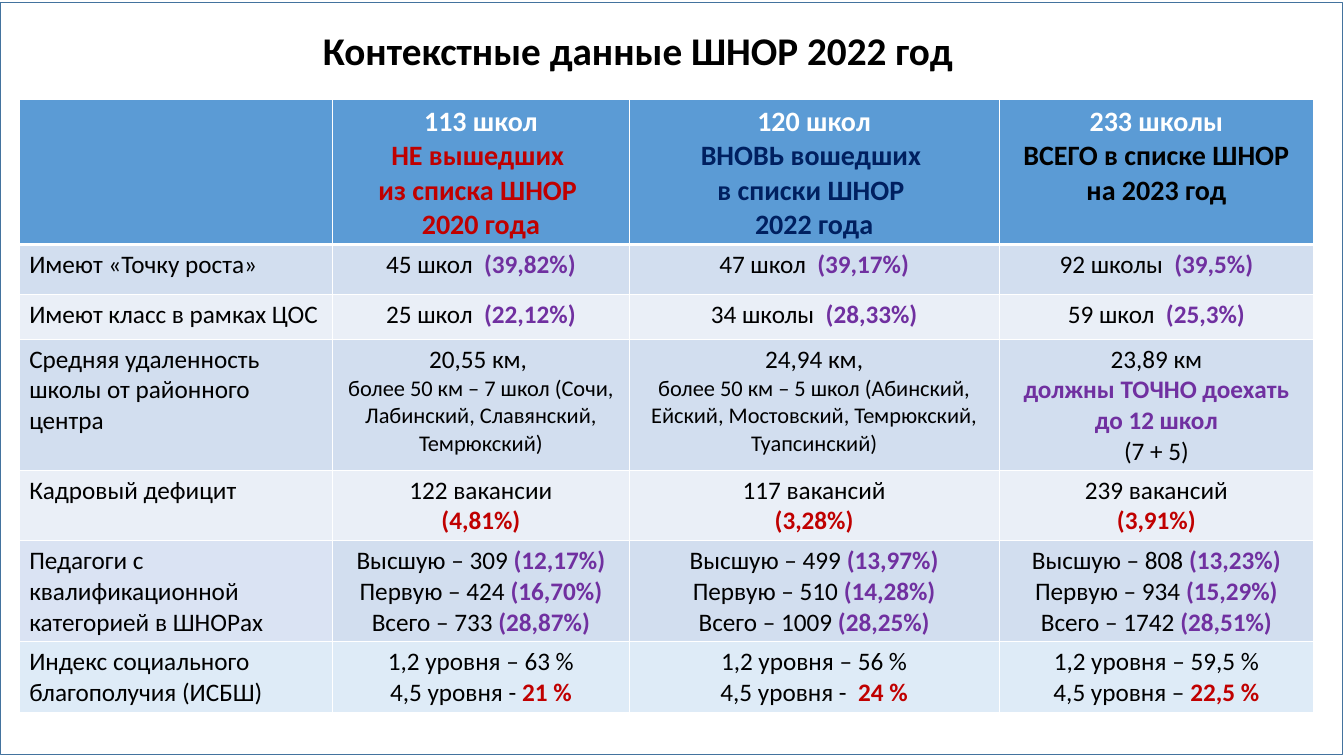
from dataclasses import dataclass

from lxml.etree import SubElement
from pptx import Presentation
from pptx.dml.color import RGBColor
from pptx.enum.shapes import MSO_SHAPE as Shape
from pptx.enum.text import MSO_ANCHOR as Anchor, PP_ALIGN as Align
from pptx.oxml.ns import qn
from pptx.util import Emu, Inches, Pt


@dataclass(frozen=True)
class Theme:
    font: str = "Calibri"
    title_size: float = 28
    head_size: float = 20
    body_size: float = 18
    small_size: float = 16
    black: str = "000000"
    white: str = "FFFFFF"
    red: str = "C00000"
    navy: str = "002060"
    purple: str = "7030A0"
    frame: str = "43739E"
    head_fill: str = "5B9BD5"
    dark_band: str = "D2DEEF"
    light_band: str = "EAEFF7"
    teacher_fill: str = "DAE3F3"
    index_fill: str = "DEEBF7"


@dataclass(frozen=True)
class Box:
    """Place on the grid of 80 columns by 45 rows."""
    left: float
    top: float
    width: float
    height: float


@dataclass(frozen=True)
class Span:
    text: str
    color: str = Theme.black
    bold: bool = False
    size: float = Theme.body_size


Line = tuple[Span, ...]
Cell = list[Line]


@dataclass(frozen=True)
class Row:
    height: float
    cells: list[Cell]
    fill: str
    first_fill: str = ""
    anchor: Anchor = Anchor.TOP


THEME = Theme()
UNIT = Inches(7.5) / 45
FRAME = Box(0, 0.12, 79.86, 44.76)
TITLE = Box(10.26, 0.42, 55.38, 5.46)
TABLE = Box(1.14, 5.94, 77.1, 36.42)
COLUMNS = [18.66, 17.64, 22.02, 18.72]


# Content helpers
def grid(cells: float) -> Emu:
    return Emu(round(cells * UNIT))


def place(box: Box) -> tuple[Emu, Emu, Emu, Emu]:
    return grid(box.left), grid(box.top), grid(box.width), grid(box.height)


def line(text: str, share: str = "", color: str = THEME.purple) -> Line:
    """A plain text, followed by a bold coloured share if there is one."""
    spans = (Span(text), Span(share, color, True))
    return tuple(span for span in spans if span.text)


def heading(count: str, color: str, *texts: str) -> Cell:
    colors = [THEME.white] + [color] * len(texts)
    return [(Span(text, tint, True, THEME.head_size),)
            for text, tint in zip((count, *texts), colors)]


def distance(average: str, detail: str) -> Cell:
    return [line(average), (Span(detail, size=THEME.small_size),)]


def vacancies(count: str, share: str) -> Cell:
    return [line(count), line("", share, THEME.red)]


def teachers(*counts: tuple[int, str]) -> Cell:
    return [line(f"{level} – {count} ", f"({share}%)")
            for level, (count, share) in zip(("Высшую", "Первую", "Всего"), counts)]


def welfare(low: str, dash: str, high: str) -> Cell:
    return [line(f"1,2 уровня – {low} %"), line(f"4,5 уровня {dash}", f"{high} %", THEME.red)]


ROWS = [
    Row(2.94, [
        [],
        heading("113 школ", THEME.red, "НЕ вышедших ", "из списка ШНОР ", "2020 года"),
        heading("120 школ", THEME.navy, "ВНОВЬ вошедших ", "в списки ШНОР ", "2022 года"),
        heading("233 школы", THEME.black, "ВСЕГО в списке ШНОР", "на 2023 год"),
    ], THEME.head_fill),
    Row(3, [
        [line("Имеют «Точку роста»")],
        [line("45 школ  ", "(39,82%)")],
        [line("47 школ  ", "(39,17%)")],
        [line("92 школы  ", "(39,5%)")],
    ], THEME.dark_band),
    Row(2.64, [
        [line("Имеют класс в рамках ЦОС")],
        [line("25 школ  ", "(22,12%)")],
        [line("34 школы  ", "(28,33%)")],
        [line("59 школ  ", "(25,3%)")],
    ], THEME.light_band),
    Row(2.94, [
        [line("Средняя удаленность школы от районного центра")],
        distance("20,55 км, ",
                 "более 50 км – 7 школ (Сочи, Лабинский, Славянский, Темрюкский)"),
        distance("24,94 км,",
                 "более 50 км – 5 школ (Абинский, Ейский, Мостовский, Темрюкский, Туапсинский)"),
        [line("23,89 км"), line("", "должны ТОЧНО доехать до 12 школ"), line("(7 + 5)")],
    ], THEME.dark_band),
    Row(2.46, [
        [line("Кадровый дефицит")],
        vacancies("122 вакансии", "(4,81%)"),
        vacancies("117 вакансий", "(3,28%)"),
        vacancies("239 вакансий", "(3,91%)"),
    ], THEME.light_band),
    Row(4.5, [
        [line("Педагоги с квалификационной категорией в ШНОРах")],
        teachers((309, "12,17"), (424, "16,70"), (733, "28,87")),
        teachers((499, "13,97"), (510, "14,28"), (1009, "28,25")),
        teachers((808, "13,23"), (934, "15,29"), (1742, "28,51")),
    ], THEME.dark_band, THEME.teacher_fill, Anchor.MIDDLE),
    Row(2.94, [
        [line("Индекс социального благополучия (ИСБШ)")],
        welfare("63", "- ", "21"),
        welfare("56", "-  ", "24"),
        welfare("59,5", "– ", "22,5"),
    ], THEME.index_fill),
]


# Drawing
def write(frame, lines: Cell, align: Align) -> None:
    for number, spans in enumerate(lines):
        para = frame.add_paragraph() if number else frame.paragraphs[0]
        para.alignment = align
        for span in spans:
            run = para.add_run()
            run.text = span.text
            run.font.name = THEME.font
            run.font.size = Pt(span.size)
            run.font.bold = span.bold
            run.font.color.rgb = RGBColor.from_string(span.color)


def add_borders(cell, above: float, below: float) -> None:
    properties = cell._tc.get_or_add_tcPr()
    for side, width in zip("LRTB", (1, 1, above, below)):
        border = SubElement(properties, qn(f"a:ln{side}"), w=str(Pt(width)))
        fill = SubElement(border, qn("a:solidFill"))
        SubElement(fill, qn("a:srgbClr"), val=THEME.white)


def draw_frame(page) -> None:
    frame = page.shapes.add_shape(Shape.RECTANGLE, *place(FRAME))
    frame.shadow.inherit = False
    frame.fill.background()
    frame.line.color.rgb = RGBColor.from_string(THEME.frame)
    frame.line.width = Pt(0.25)


def draw_title(page) -> None:
    text = page.shapes.add_textbox(*place(TITLE)).text_frame
    text.word_wrap = True
    text.vertical_anchor = Anchor.MIDDLE
    text.margin_left = text.margin_right = text.margin_top = text.margin_bottom = Inches(0.04)
    title = Span("Контекстные данные ШНОР 2022 год", THEME.black, True, THEME.title_size)
    write(text, [(title,)], Align.CENTER)
    text.paragraphs[0].line_spacing = 0.9


def draw_table(page) -> None:
    holder = page.shapes.add_table(len(ROWS), len(COLUMNS), *place(TABLE))
    table = holder.table
    for column, width in zip(table.columns, COLUMNS):
        column.width = grid(width)
    for r, row in enumerate(ROWS):
        table.rows[r].height = grid(row.height)
        for c, lines in enumerate(row.cells):
            cell = table.cell(r, c)
            add_borders(cell, 3 if r == 1 else 1, 3 if r == 0 else 1)
            cell.fill.solid()
            color = row.first_fill if c == 0 and row.first_fill else row.fill
            cell.fill.fore_color.rgb = RGBColor.from_string(color)
            cell.vertical_anchor = row.anchor
            write(cell.text_frame, lines, Align.CENTER if c else Align.LEFT)
    holder.width, holder.height = grid(TABLE.width), grid(TABLE.height)


def main() -> None:
    deck = Presentation()
    deck.slide_width, deck.slide_height = Inches(13.33), Inches(7.5)
    page = deck.slides.add_slide(deck.slide_layouts[6])
    draw_frame(page)
    draw_title(page)
    draw_table(page)
    deck.save("out.pptx")


if __name__ == "__main__":
    main()
